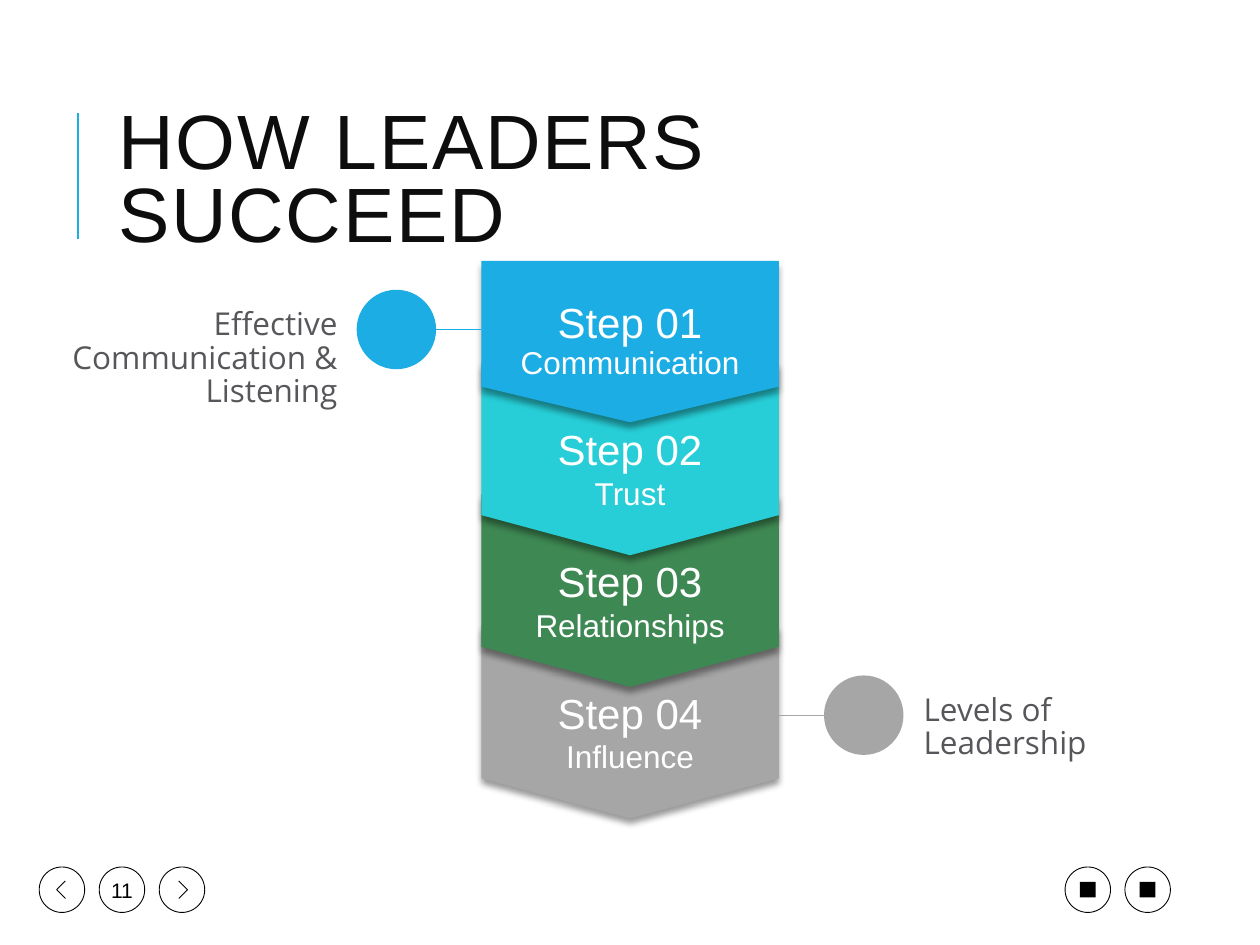
from lxml.etree import SubElement
from pptx import Presentation
from pptx.dml.color import RGBColor
from pptx.enum.shapes import MSO_CONNECTOR, MSO_SHAPE
from pptx.enum.text import MSO_ANCHOR, PP_ALIGN
from pptx.oxml.ns import qn
from pptx.util import Pt

COLORS = {
    "blue": "1CADE4",
    "cyan": "27CED7",
    "green": "3E8853",
    "gray": "A6A6A6",
    "white": "FFFFFF",
    "black": "000000",
    "title": "0D0D0D",
    "label": "57565A",
}


def add_shape(kind, left, top, width, height, fill=None, line=None):
    shape = slide.shapes.add_shape(kind, Pt(left), Pt(top), Pt(width), Pt(height))
    shape.shadow.inherit = False
    if fill:
        shape.fill.solid()
        shape.fill.fore_color.rgb = RGBColor.from_string(COLORS[fill])
    else:
        shape.fill.background()
    if line:
        shape.line.color.rgb = RGBColor.from_string(COLORS[line])
        shape.line.width = Pt(0.5)
    else:
        shape.line.fill.background()
    return shape


def add_run(paragraph, text, size, color, font="Arial"):
    run = paragraph.add_run()
    run.text = text
    run.font.size = Pt(size)
    run.font.name = font
    run.font.color.rgb = RGBColor.from_string(COLORS[color])
    return run


presentation = Presentation()
presentation.slide_width = Pt(720)
presentation.slide_height = Pt(540)
slide = presentation.slides.add_slide(presentation.slide_layouts[6])

button_size, button_top = 26, 495.4
buttons = []
for left in (22.4, 56.7, 91, 608.6, 642.8):
    buttons.append(add_shape(MSO_SHAPE.OVAL, left, button_top, button_size, button_size, line="black"))

number_frame = buttons[1].text_frame
number_frame.word_wrap = False
number_frame.vertical_anchor = MSO_ANCHOR.MIDDLE
number_frame.paragraphs[0].alignment = PP_ALIGN.CENTER
add_run(number_frame.paragraphs[0], "11", 12, "black")

button_middle = button_top + button_size / 2
for outer, tip in ((37.4, 32.4), (102.2, 107.2)):
    builder = slide.shapes.build_freeform(Pt(outer), Pt(button_middle - 5))
    builder.add_line_segments(
        [(Pt(tip), Pt(button_middle)), (Pt(outer), Pt(button_middle + 5))], close=False
    )
    arrow = builder.convert_to_shape()
    arrow.shadow.inherit = False
    arrow.fill.background()
    arrow.line.color.rgb = RGBColor.from_string(COLORS["black"])
    arrow.line.width = Pt(0.5)

for left in (608.6, 642.8):
    add_shape(MSO_SHAPE.RECTANGLE, left + 8.5, button_middle - 4.5, 9, 9, fill="black")

steps = [
    ("Step 04", "Influence", "gray", MSO_SHAPE.CHEVRON, 412.6, 110.2, 0.208, 12.2),
    ("Step 03", "Relationships", "green", MSO_SHAPE.CHEVRON, 337.4, 110.2, 0.208, 12.2),
    ("Step 02", "Trust", "cyan", MSO_SHAPE.CHEVRON, 262.2, 110.2, 0.208, 12.2),
    ("Step 01", "Communication", "blue", MSO_SHAPE.PENTAGON, 195.2, 92.2, 0.221, 10.8),
]
step_width = 170
for heading, topic, color, kind, middle, length, point, inset in steps:
    step = add_shape(kind, 360 - length / 2, middle - step_width / 2, length, step_width, fill=color)
    step.rotation = 90
    step.adjustments[0] = point
    effects = step._element.spPr.find(qn("a:effectLst"))
    shadow = SubElement(
        effects, qn("a:outerShdw"), blurRad=str(Pt(4)), dist=str(Pt(3)), dir="5400000", rotWithShape="0"
    )
    shadow_color = SubElement(shadow, qn("a:srgbClr"), val=COLORS["black"])
    SubElement(shadow_color, qn("a:alpha"), val="40000")
    frame = step.text_frame
    frame.word_wrap = True
    frame.margin_left = Pt(inset)
    frame.vertical_anchor = MSO_ANCHOR.TOP if kind == MSO_SHAPE.CHEVRON else MSO_ANCHOR.MIDDLE
    step._element.txBody.bodyPr.set("vert", "vert270")
    topic_paragraph = frame.add_paragraph()
    if kind == MSO_SHAPE.PENTAGON:
        topic_paragraph.line_spacing = 0.9
    add_run(frame.paragraphs[0], heading, 24, "white")
    add_run(topic_paragraph, topic, 18, "white")
    for paragraph in frame.paragraphs:
        paragraph.alignment = PP_ALIGN.CENTER

title = slide.shapes.add_textbox(Pt(60.5), Pt(46), Pt(570), Pt(118))
title.text_frame.word_wrap = True
title.text_frame.vertical_anchor = MSO_ANCHOR.MIDDLE
title_paragraph = title.text_frame.paragraphs[0]
title_paragraph.line_spacing = 0.8
title_run = add_run(title_paragraph, "HOW LEADERS SUCCEED", 44, "title")
title_run.font._element.set("spc", "100")

for left, top, color in ((203.8, 165.6, "blue"), (470.9, 386, "gray")):
    add_shape(MSO_SHAPE.OVAL, left, top, 45.4, 45.4, fill=color)

lines = [
    (44.6, 136.8, 44.6, 64.8, "blue", 1.5),
    (470.9, 408.7, 445, 408.7, "gray", 0.75),
    (275, 188.3, 249.2, 188.3, "blue", 0.75),
]
for start_x, start_y, end_x, end_y, color, width in lines:
    connector = slide.shapes.add_connector(
        MSO_CONNECTOR.STRAIGHT, Pt(start_x), Pt(start_y), Pt(end_x), Pt(end_y)
    )
    connector.line.color.rgb = RGBColor.from_string(COLORS[color])
    connector.line.width = Pt(width)
    SubElement(connector._element.spPr, qn("a:effectLst"))

labels = [
    ("Effective Communication & Listening", 26.6, 172.8, 65.5, PP_ALIGN.RIGHT),
    ("Levels of Leadership", 513.4, 393.1, 46.1, PP_ALIGN.LEFT),
]
for text, left, top, height, alignment in labels:
    label = slide.shapes.add_textbox(Pt(left), Pt(top), Pt(180.7), Pt(height))
    label.text_frame.word_wrap = True
    label.text_frame.margin_left = label.text_frame.margin_right = Pt(14.4)
    paragraph = label.text_frame.paragraphs[0]
    paragraph.alignment = alignment
    paragraph.line_spacing = 0.89
    add_run(paragraph, text, 18, "label", "Open Sans")

presentation.save("out.pptx")
